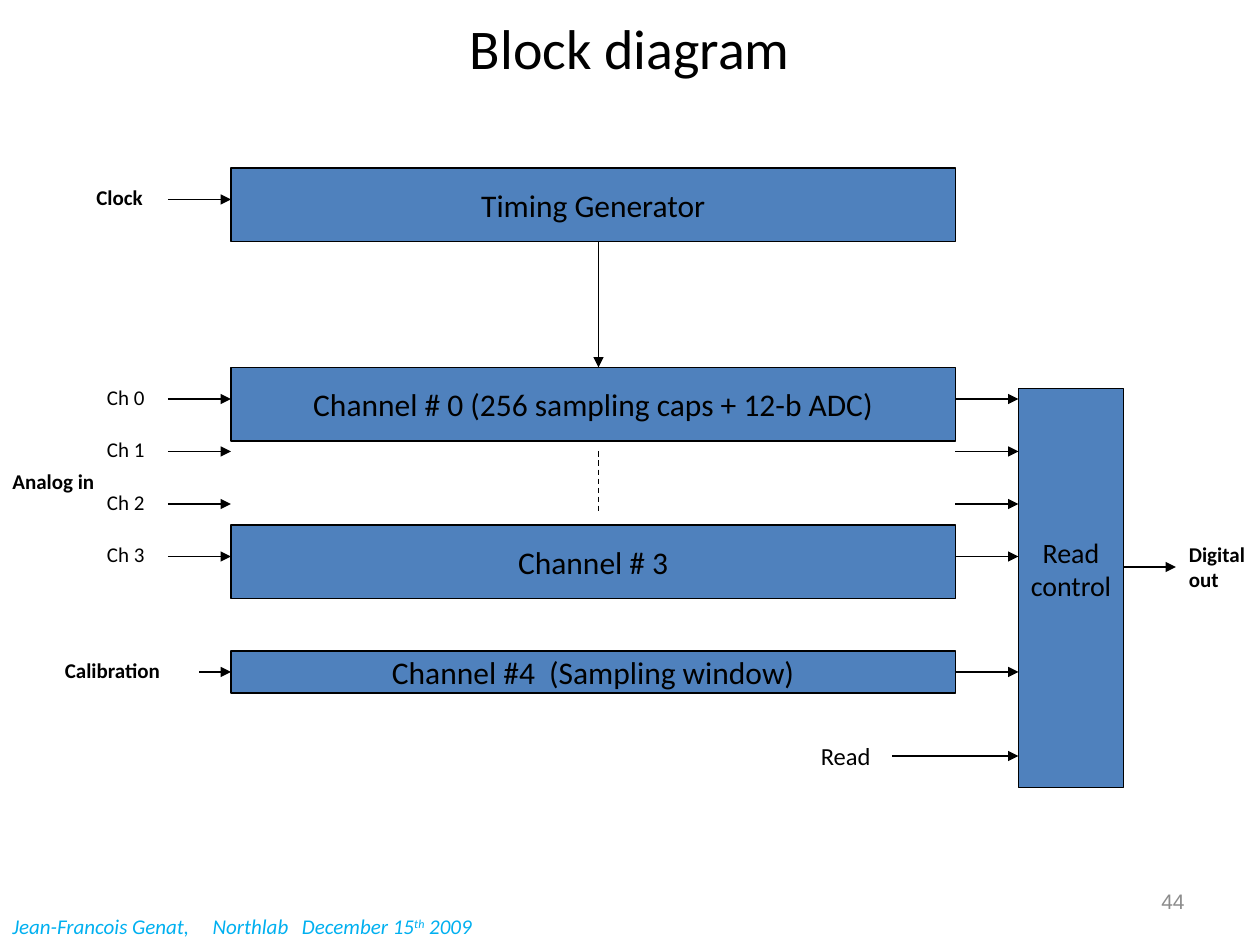
from dataclasses import dataclass

from lxml.etree import SubElement
from pptx import Presentation
from pptx.dml.color import RGBColor
from pptx.enum.dml import MSO_LINE
from pptx.enum.shapes import MSO_CONNECTOR, MSO_SHAPE
from pptx.enum.text import MSO_ANCHOR, PP_ALIGN
from pptx.oxml.ns import qn
from pptx.util import Pt

BLACK = RGBColor(0x00, 0x00, 0x00)
BLUE = RGBColor(0x4F, 0x81, 0xBD)
CYAN = RGBColor(0x00, 0xB0, 0xF0)
GREY = RGBColor(0x8C, 0x8C, 0x8C)

# Column edges and the four channel rows
BLOCK_X, BLOCK_W, BLOCK_H = 132, 414, 42
BLOCK_END = BLOCK_X + BLOCK_W
READ_X, READ_W = 582, 60
MID_X = 342
CHANNEL_YS = [228 + 30 * i for i in range(4)]
CALIBRATION_Y = 384


@dataclass
class Block:
    lines: list[str]
    x: float
    y: float
    w: float
    h: float
    size: float = 18
    bottom: float = 3.6


@dataclass
class Label:
    lines: list[str]
    x: float
    y: float
    w: float
    h: float = 21.8
    size: float = 12
    bold: bool = True
    wrap: bool = False
    font: str = "Calibri"
    color: RGBColor = BLACK
    align: PP_ALIGN = PP_ALIGN.LEFT
    anchor: MSO_ANCHOR = MSO_ANCHOR.TOP


@dataclass
class Line:
    x1: float
    y1: float
    x2: float
    y2: float
    dashed: bool = False


def add_run(p, text: str, size: float, color: RGBColor = BLACK,
            bold: bool = False, font: str = "Calibri"):
    r = p.add_run()
    r.text = text
    r.font.name, r.font.size, r.font.bold = font, Pt(size), bold
    r.font.color.rgb = color
    return r


def add_lines(tf, lines: list[str], align: PP_ALIGN, **style) -> None:
    for i, text in enumerate(lines):
        p = tf.add_paragraph() if i else tf.paragraphs[0]
        p.alignment = align
        add_run(p, text, **style)


def draw_block(s, b: Block) -> None:
    sp = s.shapes.add_shape(MSO_SHAPE.RECTANGLE, Pt(b.x), Pt(b.y), Pt(b.w), Pt(b.h))
    sp.shadow.inherit = False
    sp.fill.solid()
    sp.fill.fore_color.rgb = BLUE
    sp.line.color.rgb = BLACK
    sp.line.width = Pt(0.75)
    tf = sp.text_frame
    tf.word_wrap = False
    tf.vertical_anchor = MSO_ANCHOR.MIDDLE
    tf.margin_bottom = Pt(b.bottom)
    add_lines(tf, b.lines, PP_ALIGN.CENTER, size=b.size)


def draw_label(s, t: Label) -> None:
    tf = s.shapes.add_textbox(Pt(t.x), Pt(t.y), Pt(t.w), Pt(t.h)).text_frame
    tf.word_wrap = t.wrap
    tf.vertical_anchor = t.anchor
    add_lines(tf, t.lines, t.align, size=t.size, color=t.color, bold=t.bold, font=t.font)


def draw_line(s, c: Line) -> None:
    sp = s.shapes.add_connector(MSO_CONNECTOR.STRAIGHT, Pt(c.x1), Pt(c.y1), Pt(c.x2), Pt(c.y2))
    sp.line.color.rgb = BLACK
    sp.line.width = Pt(0.75)
    if c.dashed:
        sp.line.dash_style = MSO_LINE.DASH
    else:
        SubElement(sp.line._get_or_add_ln(), qn("a:tailEnd"), type="triangle")
    SubElement(sp._element.spPr, qn("a:effectLst"))


def draw_footer(s) -> None:
    tf = s.shapes.add_textbox(Pt(0), Pt(518.4), Pt(282), Pt(21.8)).text_frame
    tf.word_wrap = True
    p = tf.paragraphs[0]
    tabs = SubElement(p._p.get_or_add_pPr(), qn("a:tabLst"))
    for pos in (114.5, 165.5):
        SubElement(tabs, qn("a:tab"), pos=str(Pt(pos)), algn="l")
    for text in ("Jean-Francois Genat,\tNorthlab\tDecember 15", "th", " 2009"):
        r = add_run(p, text, 12, CYAN)
        r.font.italic = True
        if text == "th":
            r.font._element.set("baseline", "30000")


def main() -> None:
    prs = Presentation()
    prs.slide_width, prs.slide_height = Pt(720), Pt(540)
    s = prs.slides.add_slide(prs.slide_layouts[5])

    # Title
    title = s.shapes.title
    title.left, title.top, title.width, title.height = Pt(36), Pt(0), Pt(648), Pt(54)
    title.text_frame.vertical_anchor = MSO_ANCHOR.MIDDLE
    add_lines(title.text_frame, ["Block diagram"], PP_ALIGN.CENTER, size=32)

    # Blocks
    rows = [
        ("Timing Generator", 96, BLOCK_H),
        ("Channel # 0 (256 sampling caps + 12-b ADC)", 210, BLOCK_H),
        ("Channel # 3", 300, BLOCK_H),
        ("Channel #4  (Sampling window)", 372, 24),
    ]
    for text, y, h in rows:
        draw_block(s, Block([text], BLOCK_X, y, BLOCK_W, h))
    draw_block(s, Block(["Read", "control"], READ_X, 222, READ_W, 228, 16, bottom=25.6))

    # Arrows into the blocks, then on to the read control
    lines = [Line(96, y, BLOCK_X, y) for y in [114, *CHANNEL_YS]]
    lines += [Line(BLOCK_END, y, READ_X, y) for y in [*CHANNEL_YS, CALIBRATION_Y]]
    lines += [
        Line(114, CALIBRATION_Y, BLOCK_X, CALIBRATION_Y),
        Line(510, 432, READ_X, 432),
        Line(READ_X + READ_W, 324, 672, 324),
        Line(MID_X, 138, MID_X, 210),
        Line(MID_X, 258, MID_X, 294, dashed=True),
    ]
    for line in lines:
        draw_line(s, line)

    # Signal names and slide number
    labels = [Label([f"Ch {i}"], 54, y - 12, 39.5, bold=False)
              for i, y in enumerate(CHANNEL_YS)]
    labels += [
        Label(["Clock"], 48, 102, 46.5),
        Label(["Analog in"], 0, 264, 73.5, wrap=True),
        Label(["Calibration"], 30, 372, 70),
        Label(["Digital", "out"], 672.3, 306, 51, 36),
        Label(["Read"], 462, 420, 47.5, 24, size=14, bold=False),
        Label(["44"], 516, 500.5, 168, 28.8, bold=False, wrap=True, font="Arial",
              color=GREY, align=PP_ALIGN.RIGHT, anchor=MSO_ANCHOR.MIDDLE),
    ]
    for label in labels:
        draw_label(s, label)

    draw_footer(s)
    prs.save("out.pptx")


if __name__ == "__main__":
    main()
